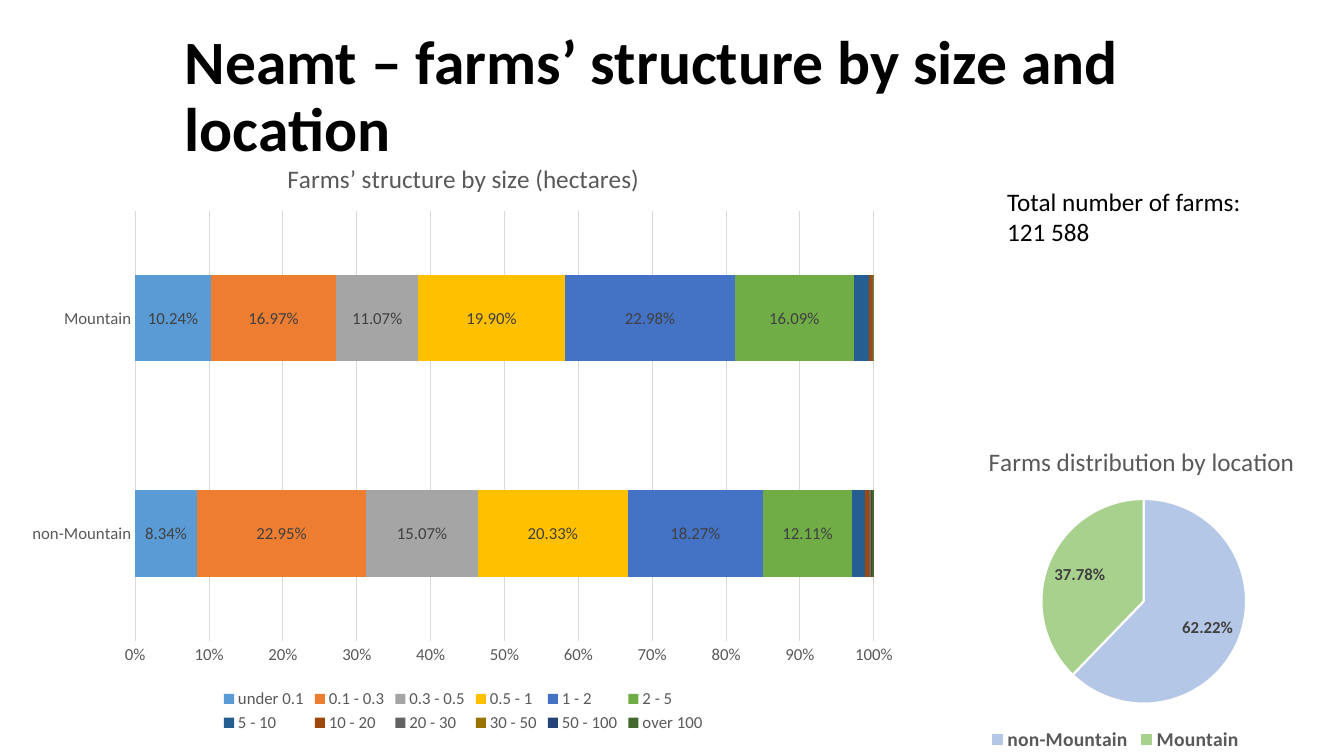
from lxml import etree
from pptx import Presentation
from pptx.chart.data import CategoryChartData
from pptx.dml.color import RGBColor
from pptx.enum.chart import XL_CHART_TYPE as Chart, XL_LABEL_POSITION as LabelPos
from pptx.enum.chart import XL_LEGEND_POSITION as LegendPos, XL_TICK_MARK as Tick
from pptx.enum.text import MSO_ANCHOR as Anchor, MSO_AUTO_SIZE as AutoSize, PP_ALIGN as Align
from pptx.oxml.ns import qn
from pptx.util import Inches, Pt

COLORS = {
    "black": "000000", "white": "FFFFFF", "grey": "595959", "label": "404040",
    "grid": "D9D9D9", "lowland": "B4C7E7", "mountain": "A9D18E",
}
LOCATIONS = ["non-Mountain", "Mountain"]

# Size class, shares (non-Mountain, Mountain), bar colour
SIZES = [
    ("under 0.1", (0.0834, 0.1024), "5B9BD5"),
    ("0.1 - 0.3", (0.2295, 0.1697), "ED7D31"),
    ("0.3 - 0.5", (0.1507, 0.1107), "A5A5A5"),
    ("0.5 - 1", (0.2033, 0.199), "FFC000"),
    ("1 - 2", (0.1827, 0.2298), "4472C4"),
    ("2 - 5", (0.1211, 0.1609), "70AD47"),
    ("5 - 10", (0.017, 0.021), "255E91"),
    ("10 - 20", (0.006, 0.004), "9E480E"),
    ("20 - 30", (0.001, 0.001), "636363"),
    ("30 - 50", (0.001, 0.001), "997300"),
    ("50 - 100", (0.001, 0), "264478"),
    ("over 100", (0.003, 0), "43682B"),
]
LABELLED = 6  # the wider segments carry a value


class FarmSlide:
    font_name = "Calibri"

    def __init__(self, prs):
        self.slide = prs.slides.add_slide(prs.slide_layouts[5])

    def rgb(self, color):
        return RGBColor.from_string(COLORS.get(color, color))

    def style(self, font, size, color, bold=False):
        font.name, font.size, font.bold = self.font_name, Pt(size), bold
        font.color.rgb = self.rgb(color)

    def title(self, text, box):
        sp = self.slide.shapes.title
        sp.left, sp.top, sp.width, sp.height = map(Inches, box)
        tf = sp.text_frame
        tf.text = text
        tf.word_wrap, tf.auto_size = True, AutoSize.NONE
        tf.vertical_anchor = Anchor.MIDDLE
        p = tf.paragraphs[0]
        p.alignment, p.line_spacing = Align.LEFT, 0.9
        self.style(p.font, 44, "black", True)

    def text(self, lines, box):
        tf = self.slide.shapes.add_textbox(*map(Inches, box)).text_frame
        tf.word_wrap = True
        tf.text = "\n".join(lines)
        for p in tf.paragraphs:
            self.style(p.font, 18, "black")

    def place(self, parent, inner=False, **fractions):
        """Set a manual layout on a chart title or plot area."""
        layout = parent.find(qn("c:layout"))
        if layout is None:
            layout = etree.Element(qn("c:layout"))
            text = parent.find(qn("c:tx"))
            parent.insert(0 if text is None else 1, layout)
        manual = etree.SubElement(layout, qn("c:manualLayout"))
        modes = {"layoutTarget": "inner"} if inner else {}
        modes.update(xMode="edge", yMode="edge")
        for tag, value in {**modes, **fractions}.items():
            etree.SubElement(manual, qn("c:" + tag)).set("val", str(value))

    def chart(self, kind, data, title, box, plot_area, legend_size, legend_bold=False):
        chart = self.slide.shapes.add_chart(kind, *map(Inches, box), data).chart
        self.style(chart.font, 10, "black")
        tf = chart.chart_title.text_frame
        tf.text = title
        self.style(tf.paragraphs[0].font, 18, "grey")
        chart.chart_title.include_in_layout = False
        chart.has_legend = True
        chart.legend.position = LegendPos.BOTTOM
        chart.legend.include_in_layout = False
        self.style(chart.legend.font, legend_size, "grey", legend_bold)
        area = chart._chartSpace.chart.plotArea
        self.place(area, inner=True, **dict(zip("xywh", plot_area)))
        return chart

    def labels(self, labels, position, bold=False):
        labels.number_format, labels.number_format_is_linked = "0.00%", False
        labels.position = position
        self.style(labels.font, 12, "label", bold)

    def pie(self, title, values, colors, box):
        data = CategoryChartData()
        data.categories = LOCATIONS
        data.add_series("Series 1", values)
        chart = self.chart(Chart.PIE, data, title, box, (0.32, 0.21, 0.5, 0.63), 14, True)
        self.place(chart.chart_title._element, x=0.18, y=0.03)
        plot = chart.plots[0]
        plot.vary_by_categories = True
        for i, color in enumerate(colors):
            fmt = plot.series[0].points[i].format
            fmt.fill.solid()
            fmt.fill.fore_color.rgb = self.rgb(color)
            fmt.line.color.rgb = self.rgb("white")
            fmt.line.width = Pt(1.5)
        plot.has_data_labels = True
        labels = plot.data_labels
        labels.show_percentage, labels.show_value = True, False
        self.labels(labels, LabelPos.INSIDE_END, True)

    def bars(self, title, sizes, box):
        data = CategoryChartData(number_format="0.00%")
        data.categories = LOCATIONS
        for name, shares, _ in sizes:
            data.add_series(name, shares)
        chart = self.chart(Chart.BAR_STACKED_100, data, title, box,
                           (0.134, 0.12, 0.824, 0.72), 12)
        plot = chart.plots[0]
        plot.gap_width, plot.overlap, plot.vary_by_categories = 150, 100, False
        for i, (series, (_, _, color)) in enumerate(zip(plot.series, sizes)):
            series.format.fill.solid()
            series.format.fill.fore_color.rgb = self.rgb(color)
            if i < LABELLED:
                series.data_labels.show_value = True
                self.labels(series.data_labels, LabelPos.CENTER)
        # Axes
        for axis in (chart.category_axis, chart.value_axis):
            axis.major_tick_mark = axis.minor_tick_mark = Tick.NONE
            self.style(axis.tick_labels.font, 12, "grey")
        chart.category_axis.format.line.color.rgb = self.rgb("grid")
        chart.category_axis.format.line.width = Pt(0.75)
        axis = chart.value_axis
        axis.minimum_scale, axis.maximum_scale, axis.major_unit = 0, 1, 0.1
        axis.tick_labels.number_format = "0%"
        axis.tick_labels.number_format_is_linked = False
        axis.format.line.fill.background()
        axis.major_gridlines.format.line.color.rgb = self.rgb("grid")
        axis.major_gridlines.format.line.width = Pt(0.75)


def main():
    prs = Presentation()
    prs.slide_width, prs.slide_height = Inches(13.33), Inches(7.5)
    farms = FarmSlide(prs)
    farms.title("Neamt – farms’ structure by size and location", (1.73, 0.27, 11.36, 1.4))
    farms.pie("Farms distribution by location", (62.22, 37.78),
              ("lowland", "mountain"), (9.03, 4.27, 4.06, 3.23))
    farms.bars("Farms’ structure by size (hectares)", SIZES, (0.15, 1.38, 8.89, 5.93))
    farms.text(["Total number of farms:", "121 588"], (9.89, 1.8, 2.92, 0.71))
    prs.save("out.pptx")


if __name__ == "__main__":
    main()
